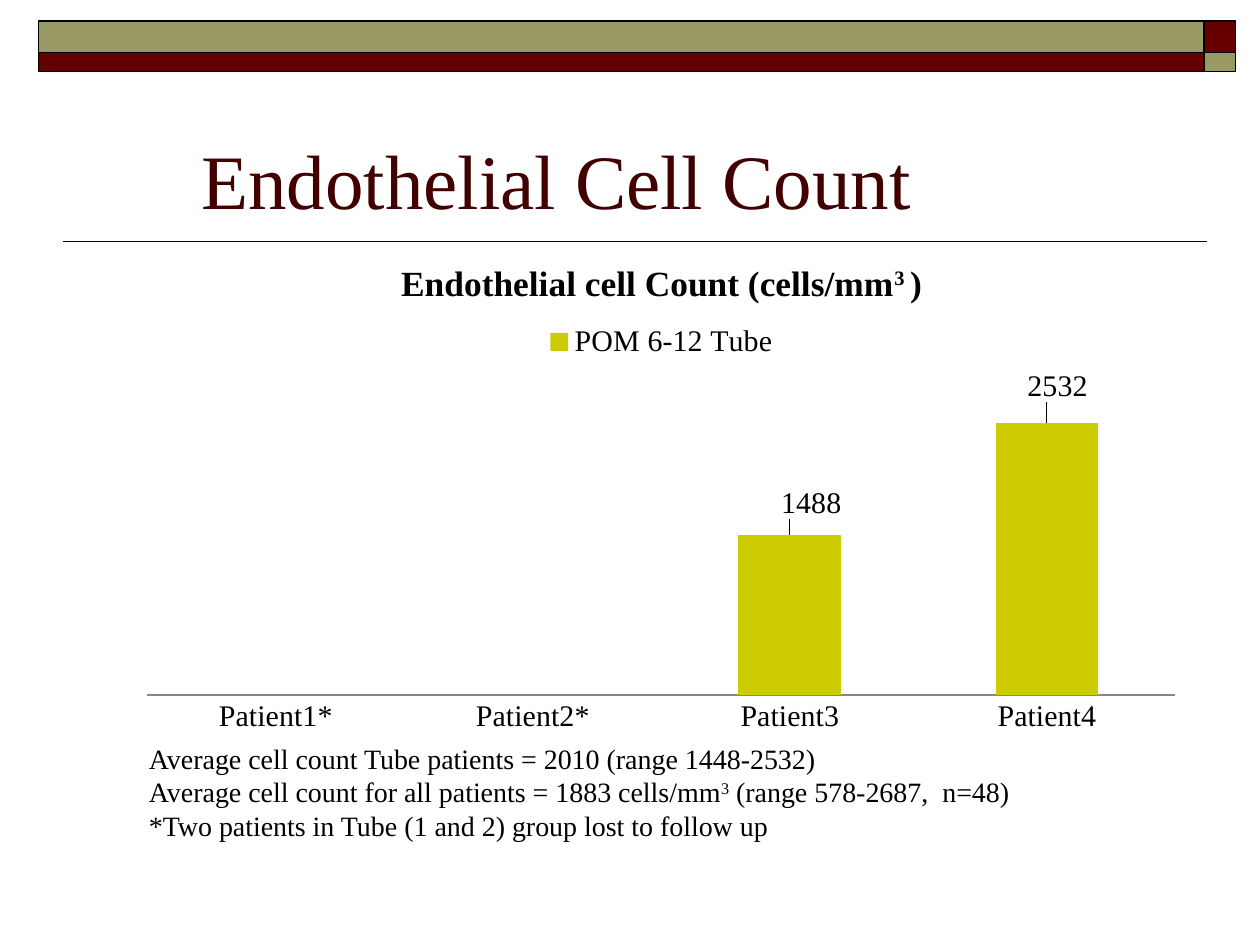
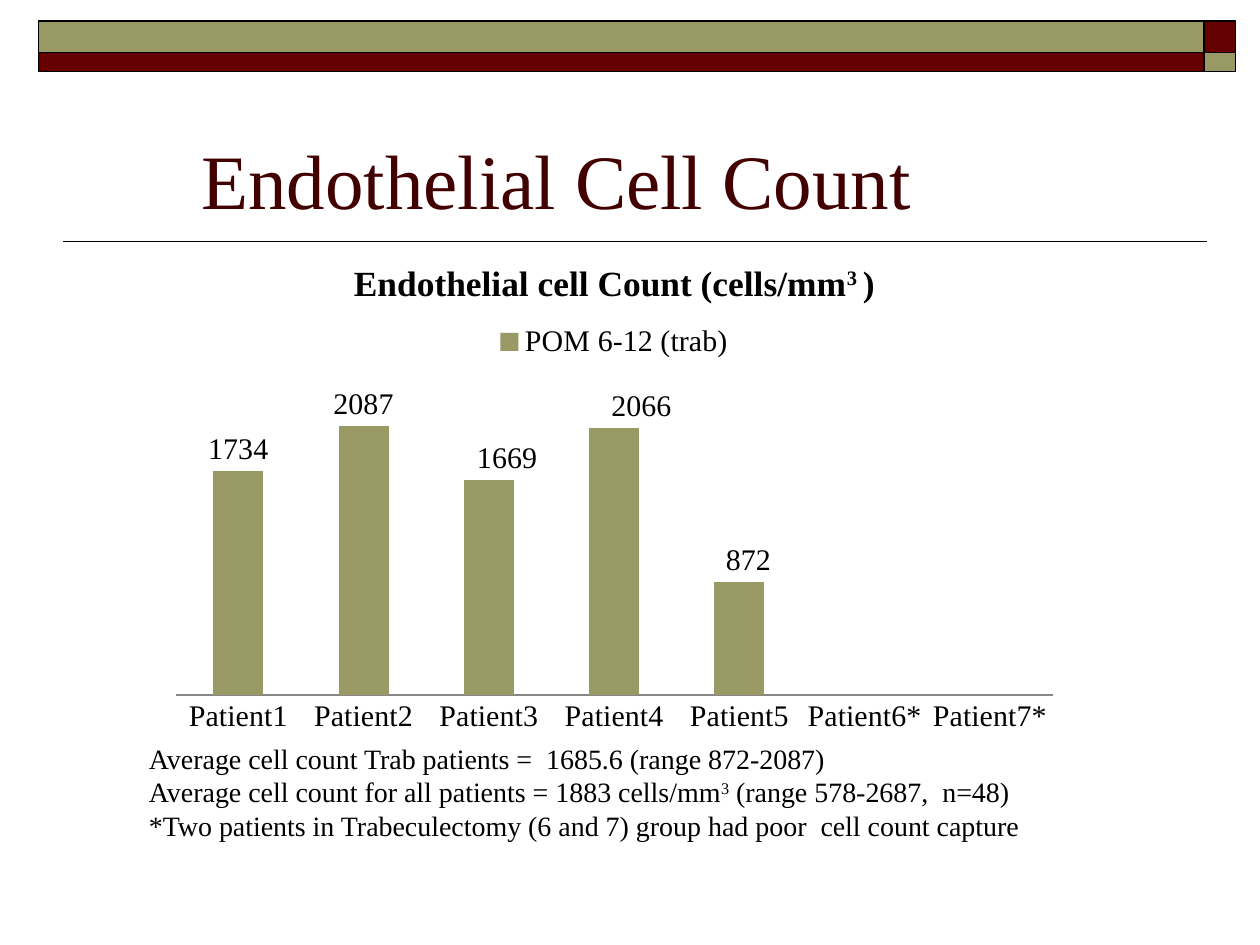
"""Builds two slides that compare endothelial cell counts by patient group."""
from lxml.etree import SubElement
from pptx import Presentation
from pptx.chart.data import CategoryChartData
from pptx.dml.color import RGBColor
from pptx.enum.chart import XL_CHART_TYPE as ChartType
from pptx.enum.chart import XL_LABEL_POSITION as LabelPosition
from pptx.enum.chart import XL_LEGEND_POSITION as LegendPosition
from pptx.enum.chart import XL_TICK_MARK as TickMark
from pptx.enum.shapes import MSO_CONNECTOR as Connector
from pptx.enum.shapes import MSO_SHAPE as Shape
from pptx.enum.text import MSO_ANCHOR as Anchor
from pptx.enum.text import PP_ALIGN as Align
from pptx.oxml.ns import qn
from pptx.util import Pt

COLORS = {
    "black": "000000",
    "maroon": "660000",
    "title": "420000",
    "olive": "999966",
    "lime": "CCCC00",
    "axis": "878787",
}
FONT = "Times New Roman"
OVERALL = [("Average cell count for all patients = 1883 cells/mm", False),
           ("3", True), (" (range 578-2687,  n=48)", False)]
CHART_TITLE = [("Endothelial cell Count (cells/mm", False), ("3 ", True), (")", False)]

GROUPS = [
    {
        "series": "POM 6-12 Tube",
        "color": "lime",
        "left": 72, "width": 612, "maximum": 3000,
        "patients": ["Patient1*", "Patient2*", "Patient3", "Patient4"],
        "counts": [None, None, 1488, 2532],
        "label_shifts": {2: (0.02, -0.02), 3: (0.01, -0.03)},
        "average": "Average cell count Tube patients = 2010 (range 1448-2532)",
        "footnote": "*Two patients in Tube (1 and 2) group lost to follow up",
    },
    {
        "series": "POM 6-12 (trab)",
        "color": "olive",
        "left": 90, "width": 522, "maximum": 2500,
        "patients": ["Patient1", "Patient2", "Patient3", "Patient4",
                     "Patient5", "Patient6*", "Patient7*"],
        "counts": [1734, 2087, 1669, 2066, 872, None, None],
        "label_shifts": {2: (0.02, 0), 3: (0.03, 0), 4: (0.01, 0)},
        "average": "Average cell count Trab patients =  1685.6 (range 872-2087)",
        "footnote": "*Two patients in Trabeculectomy (6 and 7) group had poor  cell count capture",
    },
]


class Deck:
    """Holds the style and the current slide."""

    def __init__(self):
        """Start an empty 10 by 7.5 inch presentation."""
        self.presentation = Presentation()
        self.presentation.slide_width = Pt(720)
        self.presentation.slide_height = Pt(540)
        self.slide = None

    def color(self, name):
        """Return a named colour."""
        return RGBColor.from_string(COLORS[name])

    def style(self, font, size, color="black", bold=None):
        """Apply the deck typeface to a font."""
        font.name = FONT
        font.size = Pt(size)
        font.bold = bold
        font.color.rgb = self.color(color)

    def add_runs(self, paragraph, pieces, size, color="black", bold=None):
        """Add pieces of text, each flagged as superscript or not."""
        for words, raised in pieces:
            run = paragraph.add_run()
            run.text = words
            self.style(run.font, size, color, bold)
            if raised:
                run.font._element.set("baseline", "30000")

    def add_slide(self, heading):
        """Add a slide with its bands, rule and heading."""
        self.slide = self.presentation.slides.add_slide(self.presentation.slide_layouts[5])
        self.add_rule(36, 690, 138)
        for top, height, wide, corner in ((12, 18, "olive", "maroon"), (30, 11, "maroon", "olive")):
            self.add_band(22, top, 666, height, wide)
            self.add_band(688, top, 18, height, corner)
        self.add_heading(heading)

    def add_rule(self, start, end, top):
        """Draw a thin horizontal rule."""
        rule = self.slide.shapes.add_connector(
            Connector.STRAIGHT, Pt(start), Pt(top), Pt(end), Pt(top))
        rule.line.color.rgb = self.color("black")
        rule.line.width = Pt(1)
        SubElement(rule._element.spPr, qn("a:effectLst"))

    def add_band(self, left, top, width, height, color):
        """Draw one outlined block of the top band."""
        band = self.slide.shapes.add_shape(
            Shape.RECTANGLE, Pt(left), Pt(top), Pt(width), Pt(height))
        band.shadow.inherit = False
        band.fill.solid()
        band.fill.fore_color.rgb = self.color(color)
        band.line.color.rgb = self.color("black")
        band.line.width = Pt(1)

    def add_heading(self, words):
        """Place the indented slide title."""
        heading = self.slide.shapes.title
        heading.left, heading.top, heading.width, heading.height = Pt(36), Pt(42), Pt(648), Pt(90)
        frame = heading.text_frame
        frame.vertical_anchor = Anchor.BOTTOM
        frame.margin_left = Pt(79)
        frame.paragraphs[0].alignment = Align.LEFT
        self.add_runs(frame.paragraphs[0], [(words, False)], 44, "title")

    def add_layout(self, parent, index, settings):
        """Insert a manual chart layout."""
        for previous in parent.findall(qn("c:layout")):
            parent.remove(previous)
        layout = SubElement(parent, qn("c:layout"))
        parent.insert(index, layout)
        manual = SubElement(layout, qn("c:manualLayout"))
        for tag, value in settings.items():
            SubElement(manual, qn(f"c:{tag}")).set("val", str(value))

    def add_counts_chart(self, group):
        """Draw the column chart of one patient group."""
        data = CategoryChartData()
        data.categories = group["patients"]
        data.add_series(group["series"], group["counts"])
        chart = self.slide.shapes.add_chart(
            ChartType.COLUMN_CLUSTERED, Pt(group["left"]), Pt(138),
            Pt(group["width"]), Pt(288), data).chart
        self.style(chart.font, 17.1)
        self.add_runs(chart.chart_title.text_frame.paragraphs[0], CHART_TITLE, 20.2, bold=True)
        chart.has_legend = True
        chart.legend.position = LegendPosition.TOP
        chart.legend.include_in_layout = False
        self.format_axes(chart, group["maximum"])
        self.format_columns(chart.plots[0], group)
        self.add_layout(chart._chartSpace.chart.plotArea, 0, {
            "layoutTarget": "inner", "xMode": "edge", "yMode": "edge",
            "x": 0.02, "y": 0.26, "w": 0.96, "h": 0.64})

    def format_axes(self, chart, maximum):
        """Hide the value axis and simplify the category axis."""
        chart.value_axis.visible = False
        chart.value_axis.has_major_gridlines = False
        chart.value_axis.minimum_scale = 0
        chart.value_axis.maximum_scale = maximum
        chart.category_axis.major_tick_mark = TickMark.NONE
        chart.category_axis.format.line.color.rgb = self.color("axis")
        chart.category_axis.format.line.width = Pt(0.75)

    def format_columns(self, plot, group):
        """Colour the columns and place their labels."""
        plot.gap_width = 150
        plot.vary_by_categories = False
        columns = plot.series[0]
        columns.format.fill.solid()
        columns.format.fill.fore_color.rgb = self.color(group["color"])
        columns.data_labels.show_value = True
        columns.data_labels.position = LabelPosition.OUTSIDE_END
        self.style(columns.data_labels.font, 17.1)
        for patient in group["label_shifts"]:
            columns.points[patient].data_label.position = LabelPosition.OUTSIDE_END
        labels = columns._element.iter(qn("c:dLbl"))
        for label, (x, y) in zip(labels, group["label_shifts"].values()):
            self.add_layout(label, 1, {"x": x, "y": y})

    def add_notes(self, lines):
        """Write the lines below the chart."""
        frame = self.slide.shapes.add_textbox(Pt(78), Pt(420), Pt(552), Pt(66)).text_frame
        frame.word_wrap = True
        for number, pieces in enumerate(lines):
            paragraph = frame.add_paragraph() if number else frame.paragraphs[0]
            self.add_runs(paragraph, pieces, 16)


def main():
    """Build and save the slides."""
    deck = Deck()
    for group in GROUPS:
        deck.add_slide("Endothelial Cell Count")
        deck.add_counts_chart(group)
        deck.add_notes([[(group["average"], False)], OVERALL, [(group["footnote"], False)]])
    deck.presentation.save("out.pptx")


if __name__ == "__main__":
    main()
